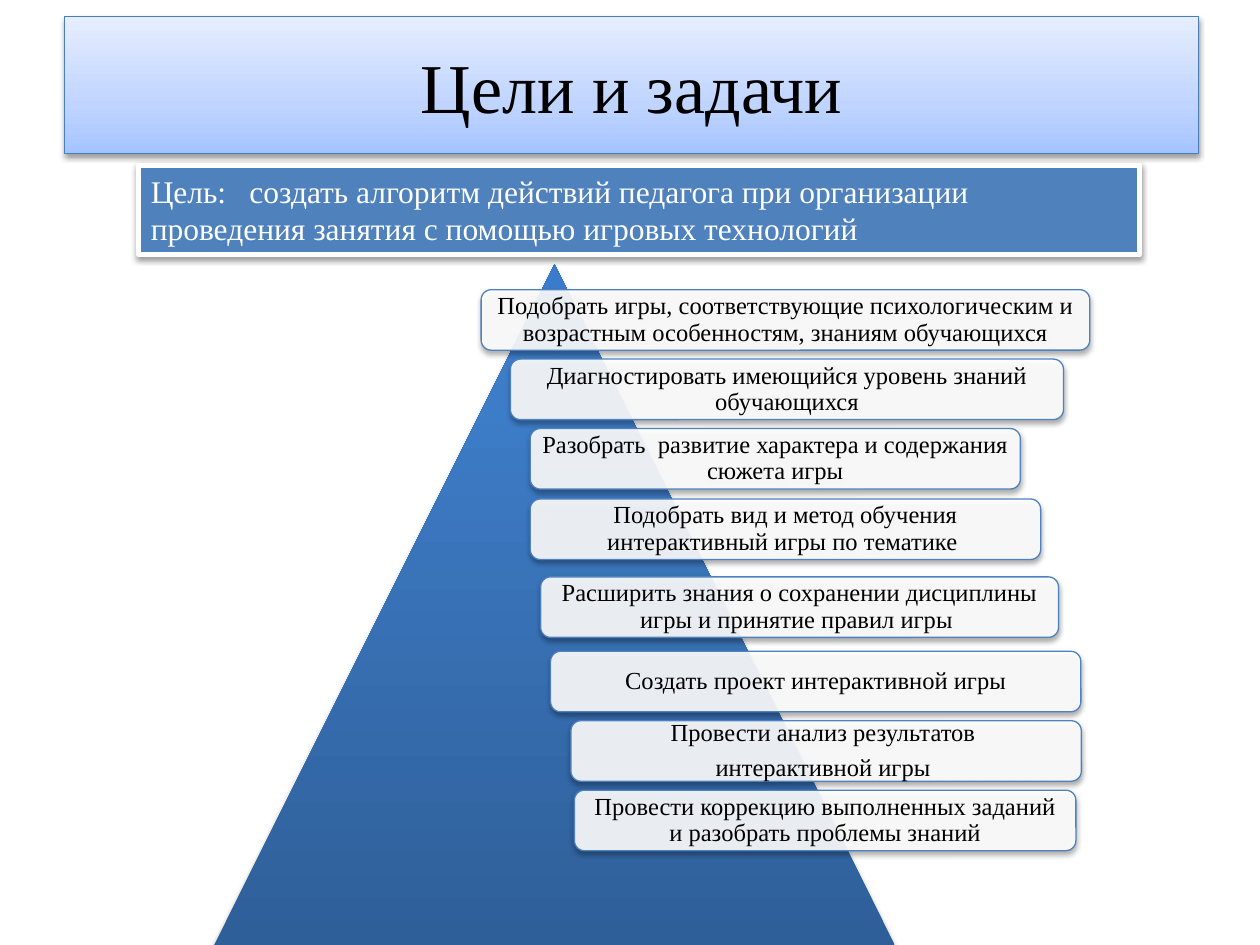
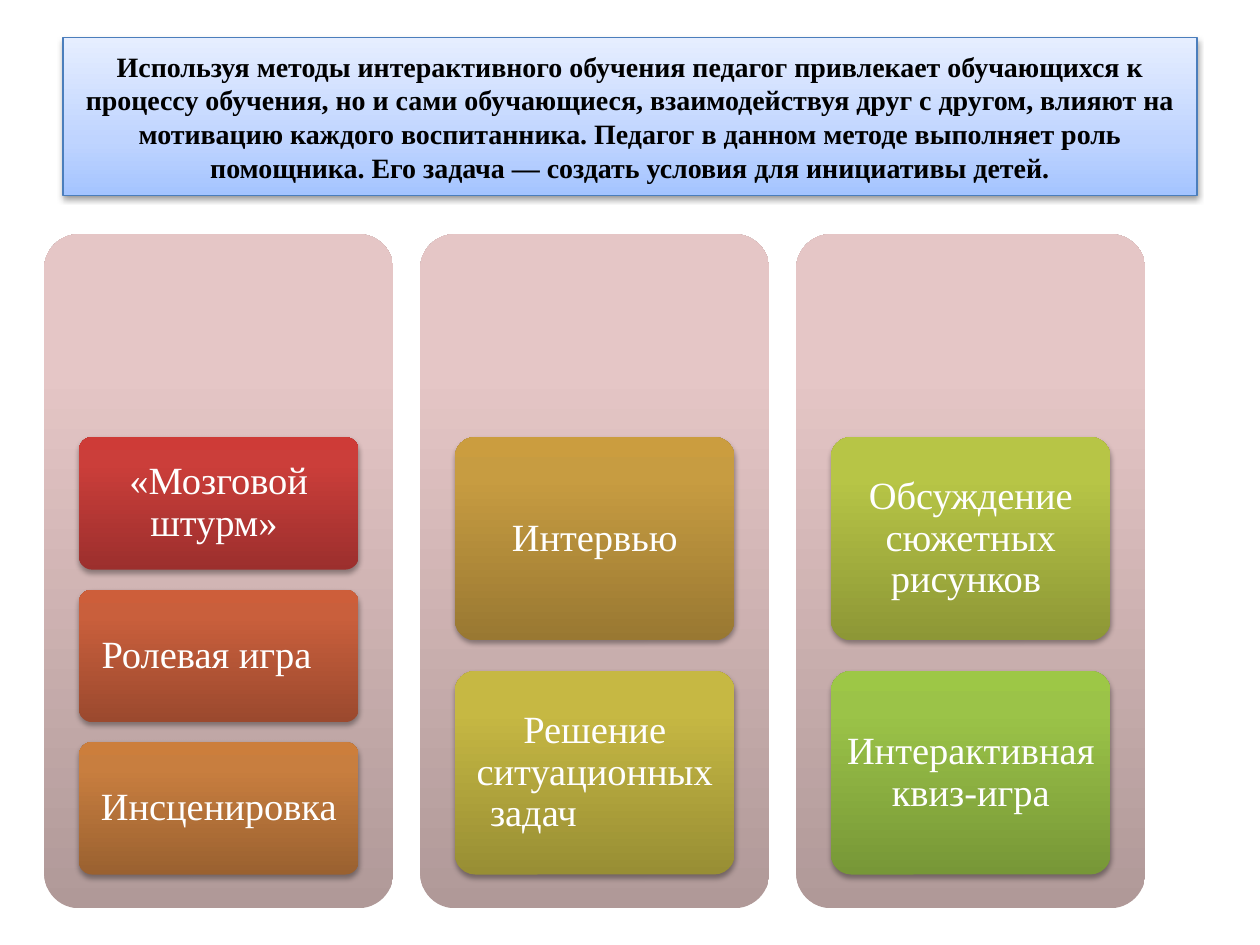
import dataclasses

import pptx
import pptx.dml.color
import pptx.enum.shapes
import pptx.enum.text
import pptx.oxml.ns
import pptx.oxml.xmlchemy
import pptx.shapes.autoshape
import pptx.slide
import pptx.util
from lxml import etree

Cm = pptx.util.Cm
Pt = pptx.util.Pt
Kind = pptx.enum.shapes.MSO_SHAPE
Align = pptx.enum.text.PP_ALIGN
Anchor = pptx.enum.text.MSO_ANCHOR
Shape = pptx.shapes.autoshape.Shape
qn = pptx.oxml.ns.qn

FONT = "Times New Roman"
HEX = {
    "black": "000000",
    "white": "FFFFFF",
    "blue": "4F81BD",
    "edge": "4B7EBC",
}
# Gradient stops run from the bottom edge to the top
BAND = ((0, "A4C4FF"), (35, "BFD4FF"), (100, "E6EEFF"))
PEAK = ((0, "2F5F99"), (80, "3D7CC7"), (100, "3A7CCB"))
PANEL = ((0, "B09998"), (80, "E5C6C6"), (100, "E6C7C6"))


@dataclasses.dataclass(frozen=True)
class Box:
    left: float
    top: float
    width: float
    height: float


@dataclasses.dataclass(frozen=True)
class Style:
    size: float
    color: str = "black"
    bold: bool = False
    align: Align = Align.CENTER
    lead: float = 1.0
    gap: float = 0


@dataclasses.dataclass(frozen=True)
class Task:
    left: float
    top: float
    width: float
    lines: tuple[str, ...]


@dataclasses.dataclass(frozen=True)
class Tile:
    lines: tuple[str, ...]
    tones: tuple[str, str, str]
    indent: float = 0  # left indent of the last line, 0 keeps it centred


TASKS = (
    Task(9.7, 5.84, 12.27, ("Подобрать игры, соответствующие психологическим и "
                            "возрастным особенностям, знаниям обучающихся",)),
    Task(10.29, 7.24, 11.15, ("Диагностировать имеющийся уровень знаний обучающихся",)),
    Task(10.69, 8.64, 9.88, ("Разобрать  развитие характера и содержания сюжета игры",)),
    Task(10.69, 10.06, 10.29, ("Подобрать вид и метод обучения интерактивный игры "
                               "по тематике ",)),
    Task(10.9, 11.63, 10.44, ("Расширить знания о сохранении дисциплины игры "
                              "и принятие правил игры ",)),
    Task(11.1, 13.13, 10.69, ("Создать проект интерактивной игры",)),
    Task(11.51, 14.53, 10.29, ("Провести анализ результатов ", "интерактивной игры ")),
    Task(11.58, 15.93, 10.11, ("Провести коррекцию выполненных заданий "
                               "и разобрать проблемы знаний",)),
)

COLUMNS = (
    (
        Tile(("«Мозговой штурм» ",), ("9C2F2D", "CB3E3A", "CE3B37")),
        Tile(("Ролевая игра",), ("9B492E", "C95F3C", "CD5E3A"), 0.23),
        Tile(("Инсценировка",), ("9A6130", "C87E3F", "CC7E3C")),
    ),
    (
        Tile(("Интервью",), ("997832", "C79C41", "CB9D3F")),
        Tile(("Решение ситуационных", "задач"), ("988E34", "C6B843", "C9BB41"), 0.44),
    ),
    (
        Tile(("Обсуждение сюжетных рисунков ",), ("8D9736", "B7C546", "B9C844")),
        Tile(("Интерактивная квиз-игра",), ("779737", "9BC348", "9DC746")),
    ),
)


# Shared helpers
def rgb(code: str) -> pptx.dml.color.RGBColor:
    return pptx.dml.color.RGBColor.from_string(code)


def place(shape: Shape, box: Box) -> None:
    shape.left, shape.top = Cm(box.left), Cm(box.top)
    shape.width, shape.height = Cm(box.width), Cm(box.height)


def blend(shape: Shape, stops: tuple[tuple[int, str], ...]) -> None:
    shape.fill.gradient()
    shape.fill.gradient_angle = 90
    group = shape.element.spPr.find(".//" + qn("a:gsLst"))
    for old in list(group):
        group.remove(old)
    for pos, code in stops:
        stop = etree.SubElement(group, qn("a:gs"), pos=str(pos * 1000))
        etree.SubElement(stop, qn("a:srgbClr"), val=code)


def paint(shape: Shape, code: str, alpha: int = 100) -> None:
    shape.fill.solid()
    shape.fill.fore_color.rgb = rgb(code)
    if alpha < 100:
        tone = shape.element.spPr.find(qn("a:solidFill") + "/" + qn("a:srgbClr"))
        etree.SubElement(tone, qn("a:alpha"), val=str(alpha * 1000))


def edge(shape: Shape, code: str, width: float) -> None:
    shape.line.color.rgb = rgb(code)
    shape.line.width = Pt(width)


def shade(shape: Shape, alpha: int = 35, dist: float = 1.8) -> None:
    shape.shadow.inherit = False
    group = shape.element.spPr.find(qn("a:effectLst"))
    cast = etree.SubElement(group, qn("a:outerShdw"), blurRad=str(int(Pt(3.1))),
                            dist=str(int(Pt(dist))), dir="5400000", rotWithShape="0")
    tone = etree.SubElement(cast, qn("a:srgbClr"), val=HEX["black"])
    etree.SubElement(tone, qn("a:alpha"), val=str(alpha * 1000))


def add(slide: pptx.slide.Slide, kind: Kind, box: Box) -> Shape:
    shape = slide.shapes.add_shape(kind, 0, 0, 0, 0)
    place(shape, box)
    shape.shadow.inherit = False
    shape.line.fill.background()
    return shape


def write(shape: Shape, lines: tuple[str, ...], style: Style,
          pad: tuple[float, float] = (0.25, 0.13), anchor: Anchor = Anchor.MIDDLE) -> None:
    frame = shape.text_frame
    frame.word_wrap = True
    frame.auto_size = pptx.enum.text.MSO_AUTO_SIZE.NONE
    frame.vertical_anchor = anchor
    frame.margin_left = frame.margin_right = Cm(pad[0])
    frame.margin_top = frame.margin_bottom = Cm(pad[1])
    frame.text = "\n".join(lines)
    for index, para in enumerate(frame.paragraphs):
        para.alignment = style.align
        para.line_spacing = style.lead
        if index and style.gap:
            para.space_before = Pt(style.gap)
        para.font.name = FONT
        para.font.size = Pt(style.size)
        para.font.bold = style.bold
        para.font.color.rgb = rgb(HEX[style.color])


def head(deck: pptx.presentation.Presentation, text: str, box: Box,
         style: Style) -> pptx.slide.Slide:
    slide = deck.slides.add_slide(deck.slide_layouts[5])
    title = slide.shapes.title
    place(title, box)
    blend(title, BAND)
    edge(title, HEX["edge"], 0.75)
    shade(title, 38, 1.6)
    write(title, (text,), style)
    return slide


# Slide 1: goal and tasks
def goals(deck: pptx.presentation.Presentation) -> None:
    slide = head(deck, "Цели и задачи", Box(1.3, 0.33, 22.86, 2.77), Style(40))

    goal = add(slide, Kind.RECTANGLE, Box(2.79, 3.33, 20.19, 1.8))
    paint(goal, HEX["blue"])
    edge(goal, HEX["white"], 3)
    shade(goal, 38, 1.6)
    goal.text_frame.text = ""
    write(goal, ("Цель:\tсоздать алгоритм действий педагога при организации "
                 "проведения занятия с помощью игровых технологий",),
          Style(18, "white", align=Align.LEFT), anchor=Anchor.TOP)
    props = goal.text_frame.paragraphs[0]._p.get_or_add_pPr()
    tabs = etree.Element(qn("a:tabLst"))
    etree.SubElement(tabs, qn("a:tab"), pos=str(int(Cm(1.99))), algn="l")
    props.find(qn("a:defRPr")).addprevious(tabs)

    peak = add(slide, Kind.ISOSCELES_TRIANGLE, Box(4.32, 5.33, 13.72, 13.72))
    blend(peak, PEAK)
    shade(peak)

    for task in TASKS:
        card = add(slide, Kind.ROUNDED_RECTANGLE,
                   Box(task.left, task.top, task.width, 1.22))
        paint(card, HEX["white"], 90)
        edge(card, HEX["blue"], 0.75)
        shade(card)
        write(card, task.lines, Style(14, lead=0.9, gap=5), (0.15, 0.15))


# Slide 2: columns of methods
def methods(deck: pptx.presentation.Presentation) -> None:
    slide = head(
        deck,
        "Используя методы интерактивного обучения педагог привлекает обучающихся "
        "к процессу обучения, но и сами обучающиеся, взаимодействуя друг с другом, "
        "влияют на мотивацию каждого воспитанника. Педагог в данном методе выполняет "
        "роль помощника. Его задача — создать условия для инициативы детей.",
        Box(1.27, 0.76, 22.86, 3.18), Style(16, bold=True))

    span, ratio = 8.82, 0.15  # tile area height, gap as a share of tile height
    for index, tiles in enumerate(COLUMNS):
        left = 0.89 + 7.58 * index
        panel = add(slide, Kind.ROUNDED_RECTANGLE, Box(left, 4.72, 7.04, 13.59))
        panel.adjustments[0] = 0.1
        blend(panel, PANEL)

        count = len(tiles)
        height = span / (count + (count - 1) * ratio)
        for row, tile in enumerate(tiles):
            top = 8.81 + row * height * (1 + ratio)
            block = add(slide, Kind.ROUNDED_RECTANGLE,
                        Box(left + 0.7, top, 5.64, height))
            block.adjustments[0] = 0.1
            blend(block, tuple(zip((0, 80, 100), tile.tones)))
            shade(block)
            write(block, tile.lines, Style(22, "white", lead=0.9), (0.15, 0.13))
            if tile.indent:
                last = block.text_frame.paragraphs[-1]
                last.alignment = Align.LEFT
                last._p.get_or_add_pPr().set("marL", str(int(Cm(tile.indent))))


def main() -> None:
    deck = pptx.Presentation()
    deck.slide_width, deck.slide_height = Cm(25.4), Cm(19.05)
    goals(deck)
    methods(deck)
    deck.save("out.pptx")


if __name__ == "__main__":
    main()
